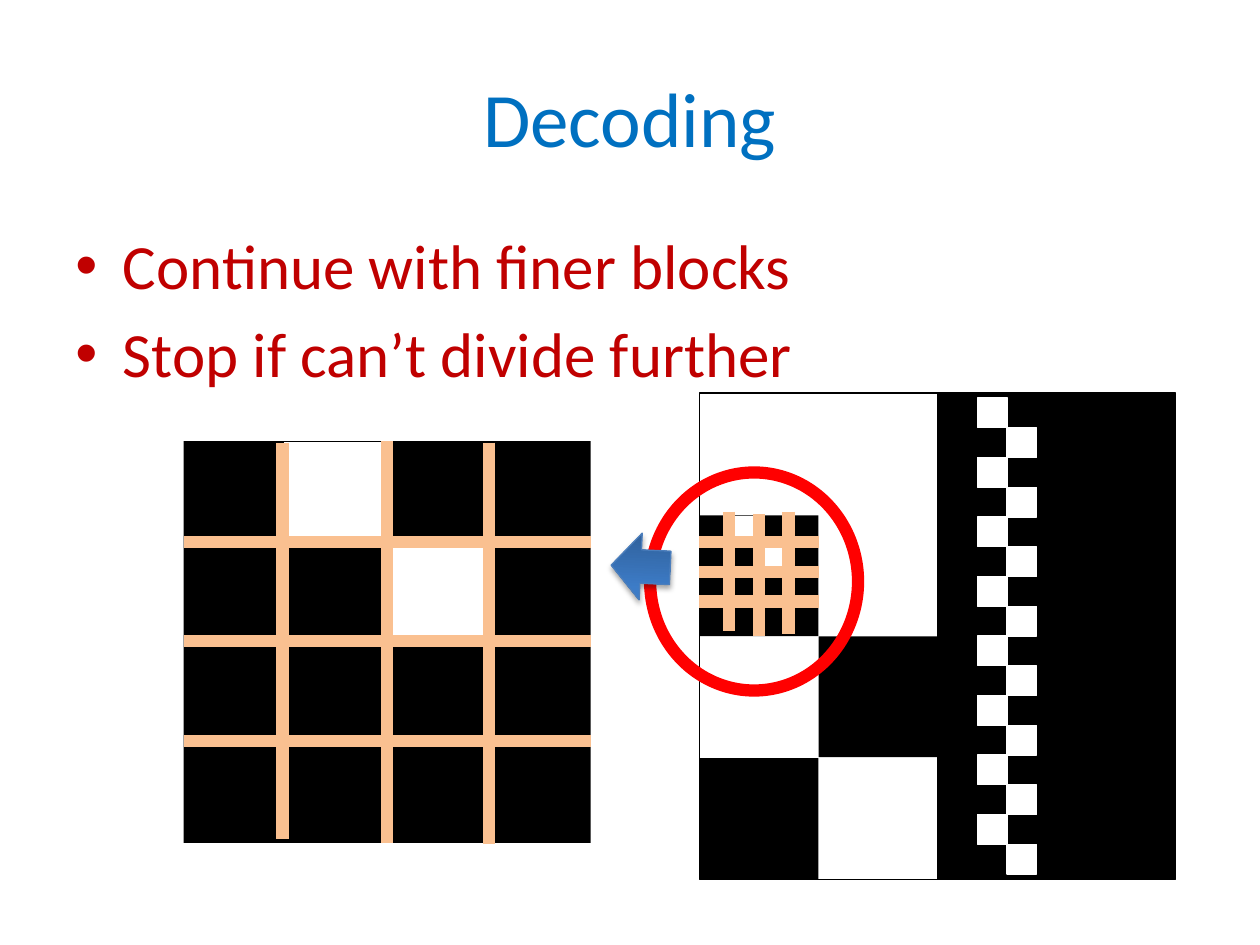
from lxml.etree import SubElement
from pptx import Presentation
from pptx.dml.color import RGBColor
from pptx.enum.shapes import MSO_CONNECTOR, MSO_SHAPE
from pptx.enum.text import MSO_ANCHOR, PP_ALIGN
from pptx.oxml import parse_xml
from pptx.oxml.ns import nsdecls, qn
from pptx.util import Pt

COLORS = {
    "title": "0070C0", "body": "C00000", "black": "000000", "white": "FFFFFF",
    "grid": "FAC090", "ring": "FF0000", "arrow_line": "4B7EBC",
    "arrow_dark": "2F5F99", "arrow_mid": "3D7CC7", "arrow_light": "3A7CCB",
}

deck = Presentation()
deck.slide_width, deck.slide_height = Pt(720), Pt(540)
page = deck.slides.add_slide(deck.slide_layouts[6])


def add_block(kind, left, top, width, height, fill=None, line=None, weight=0.75):
    shape = page.shapes.add_shape(kind, Pt(left), Pt(top), Pt(width), Pt(height))
    shape.shadow.inherit = False
    for part, color in ((shape.fill, fill), (shape.line.fill, line)):
        if color:
            part.solid()
            part.fore_color.rgb = RGBColor.from_string(COLORS[color])
        else:
            part.background()
    if line:
        shape.line.width = Pt(weight)
    return shape


def add_grid_line(x1, y1, x2, y2):
    rule = page.shapes.add_connector(
        MSO_CONNECTOR.STRAIGHT, Pt(x1), Pt(y1), Pt(x2), Pt(y2))
    rule.line.width = Pt(7)
    rule.line.color.rgb = RGBColor.from_string(COLORS["grid"])
    SubElement(rule.line._get_or_add_ln().getparent(), qn("a:effectLst"))


# Title and bullets
texts = [
    {"at": (36, 21.6, 648, 90), "lines": ["Decoding"], "color": "title", "size": 44,
     "anchor": MSO_ANCHOR.MIDDLE, "para": {"alignment": PP_ALIGN.CENTER}},
    {"at": (36, 126, 494, 356.4), "color": "body", "size": 36,
     "lines": ["Continue with finer blocks", "Stop if can’t divide further"],
     "anchor": MSO_ANCHOR.TOP, "para": {"space_before": Pt(7.2)}, "bullet": "•"},
]
for text in texts:
    box = page.shapes.add_textbox(*map(Pt, text["at"]))
    frame = box.text_frame
    frame.word_wrap = True
    frame.vertical_anchor = text["anchor"]
    for index, line in enumerate(text["lines"]):
        para = frame.paragraphs[0] if index == 0 else frame.add_paragraph()
        for name, value in text["para"].items():
            setattr(para, name, value)
        span = para.add_run()
        span.text = line
        for name, value in {"name": "Calibri", "size": Pt(text["size"])}.items():
            setattr(span.font, name, value)
        span.font.color.rgb = RGBColor.from_string(COLORS[text["color"]])
        if "bullet" in text:
            properties = para._p.get_or_add_pPr()
            properties.set("marL", str(Pt(27)))
            properties.set("indent", str(Pt(-27)))
            SubElement(properties, qn("a:buFont")).set("typeface", "Arial")
            SubElement(properties, qn("a:buChar")).set("char", text["bullet"])

# Decoded image: frame, black half and black quarter blocks
RECT = MSO_SHAPE.RECTANGLE
add_block(RECT, 399.6, 224.6, 262, 278, line="black")
add_block(RECT, 535.7, 224.6, 136, 278, fill="black", line="black")
for left, top in ((467.8, 363.6), (399.6, 433.2)):
    add_block(RECT, left, top, 68, 69.1, fill="black")

# Zigzag of white cells
for row in range(16):
    add_block(RECT, 558.7 + 16.8 * (row % 2), 227.5 + 17 * row, 17, 17,
              fill="white", line="white")

# Small block with its grid
add_block(RECT, 399.6, 294.5, 68, 69.1, fill="black")
for step in (0, 1):
    add_block(RECT, 416.6 + 17 * step, 295.2 + 17 * step, 17, 17,
              fill="white", line="white")
for step, (top, bottom) in enumerate(((292.4, 360.8), (293.8, 363.6), (292.4, 362.2))):
    add_grid_line(399.6, 309.7 + 17 * step, 468, 309.7 + 17 * step)
    add_grid_line(416.6 + 17 * step, top, 416.6 + 17 * step, bottom)

# Ring around the small block
add_block(MSO_SHAPE.OVAL, 371.5, 270, 118.8, 124.6, line="ring", weight=7)

# Enlarged block with its grid
add_block(RECT, 105, 252, 232.6, 229.7, fill="black")
for left, top in ((162.7, 252.9), (221.2, 310.3)):
    add_block(RECT, left, top, 58.2, 56.5, fill="white", line="white")
for step, (x, top, bottom) in enumerate(
        ((161.5, 252.9, 479.6), (221.2, 252, 481.7), (279.4, 252.9, 482.4))):
    add_grid_line(105, 309.7 + 56.8 * step, 337.6, 309.7 + 56.8 * step)
    add_grid_line(x, top, x, bottom)

# Arrow with gradient and soft shadow
arrow = add_block(MSO_SHAPE.RIGHT_ARROW, 349.2, 304.6, 33.8, 38.2,
                  fill="arrow_mid", line="arrow_line")
arrow.rotation = 182.7
stops = "".join(
    f'<a:gs pos="{place * 1000}"><a:srgbClr val="{COLORS[color]}"/></a:gs>'
    for place, color in ((0, "arrow_dark"), (80, "arrow_mid"), (100, "arrow_light")))
look = arrow._element.spPr
look.replace(look.find(qn("a:solidFill")), parse_xml(
    f'<a:gradFill {nsdecls("a")} rotWithShape="1"><a:gsLst>{stops}</a:gsLst>'
    '<a:lin ang="16200000" scaled="0"/></a:gradFill>'))
look.replace(look.find(qn("a:effectLst")), parse_xml(
    f'<a:effectLst {nsdecls("a")}><a:outerShdw blurRad="{Pt(3.1)}" dist="{Pt(1.8)}" '
    f'dir="5400000" rotWithShape="0"><a:srgbClr val="{COLORS["black"]}">'
    '<a:alpha val="35000"/></a:srgbClr></a:outerShdw></a:effectLst>'))

deck.save("out.pptx")
